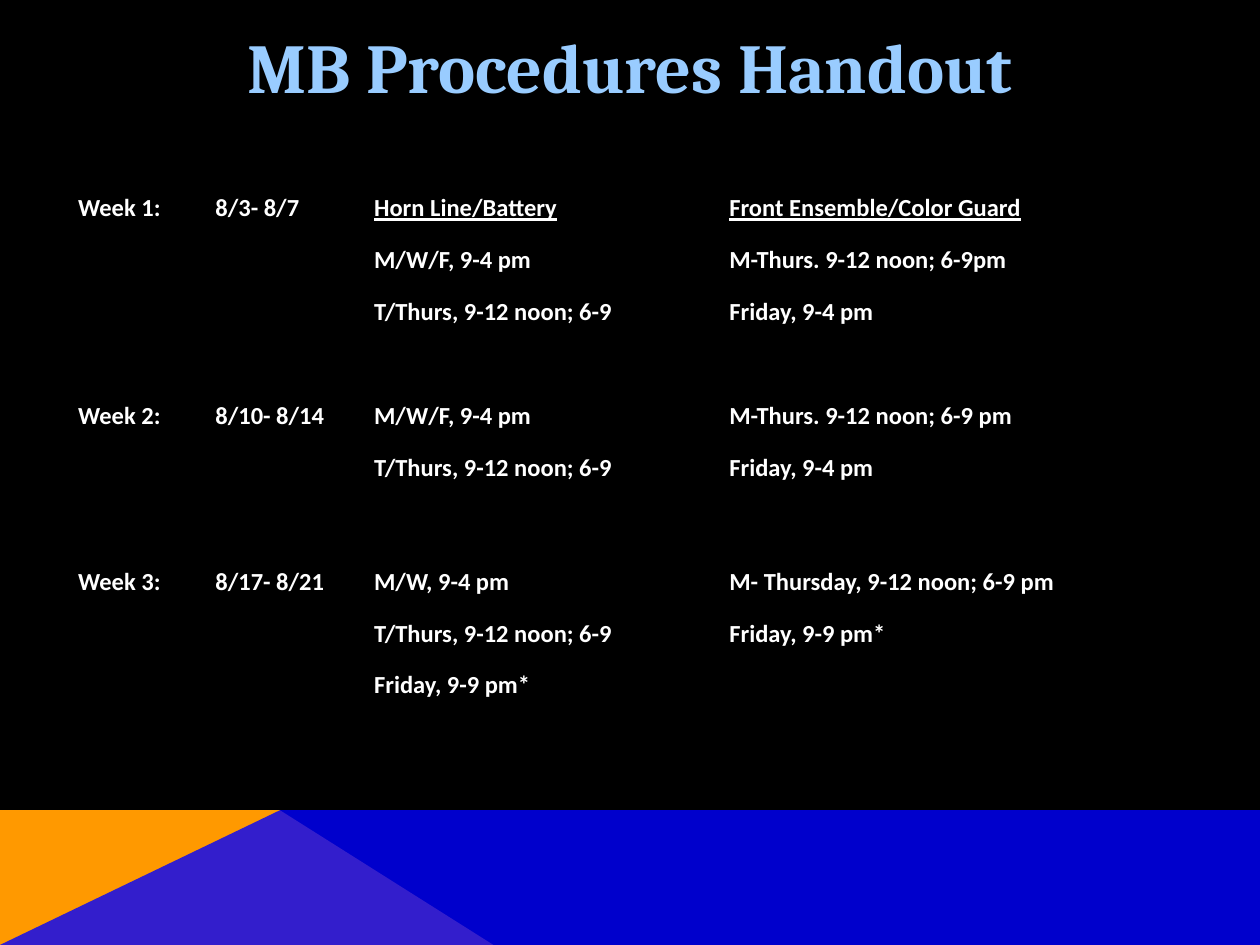
from lxml.etree import SubElement
from pptx import Presentation
from pptx.dml.color import RGBColor
from pptx.enum.text import MSO_ANCHOR, PP_ALIGN
from pptx.oxml.ns import qn
from pptx.util import Pt

TITLE = "MB Procedures Handout"
WEEKS = [
    (["Week 1:"], ["8/3- 8/7"],
     ["Horn Line/Battery", "M/W/F, 9-4 pm", "T/Thurs, 9-12 noon; 6-9"],
     ["Front Ensemble/Color Guard", "M-Thurs. 9-12 noon; 6-9pm", "Friday, 9-4 pm"], []),
    (["Week 2:"], ["8/10- 8/14"],
     ["M/W/F, 9-4 pm", "T/Thurs, 9-12 noon; 6-9"],
     ["M-Thurs. 9-12 noon; 6-9 pm", "Friday, 9-4 pm"], []),
    (["Week 3:"], ["8/17- 8/21"],
     ["M/W, 9-4 pm", "T/Thurs, 9-12 noon; 6-9", "Friday, 9-9 pm*"],
     ["M- Thursday, 9-12 noon; 6-9 pm", "Friday, 9-9 pm*"], []),
]
HEADS = ("Horn Line/Battery", "Front Ensemble/Color Guard")
WIDTHS = (78.5, 90.7, 203, 200.2, 45.4)
HEIGHTS = (118.8, 67.7, 109.4)
TOPS = (0, 0, 27)
RULES = (3, 1, 1)
WIDE, HIGH, EDGE, PEAK = 720, 540, 463, 160.5
BANDS = [
    ("FF9900", 100, [(0, HIGH), (0, EDGE), (PEAK, EDGE), (281.5, HIGH)]),
    ("0000FF", 80, [(0, HIGH), (PEAK, EDGE), (WIDE, EDGE), (WIDE, HIGH)]),
]
HEAD_FONT = {"name": "Cambria", "size": Pt(40), "bold": True}
BODY_FONT = {"name": "Calibri", "size": Pt(14), "bold": True}
PARA = {"line_spacing": 1.15, "space_after": Pt(10)}


def apply(obj, vals):
    """Set each named attribute on an object."""
    for key, val in vals.items():
        setattr(obj, key, val)


def paint(fill, tone):
    """Give a fill one solid colour."""
    fill.solid()
    fill.fore_color.rgb = RGBColor.from_string(tone)


def write(para, text, font, tone):
    """Add one formatted run to a paragraph."""
    run = para.add_run()
    run.text = text
    apply(run.font, font)
    run.font.color.rgb = RGBColor.from_string(tone)
    return run


def add_band(slide, tone, alpha, points):
    """Draw one filled outline at the foot of the slide."""
    pen = slide.shapes.build_freeform(*points[0], scale=12700)
    pen.add_line_segments(points[1:], close=True)
    shape = pen.convert_to_shape()
    shape.shadow.inherit = False
    shape.line.fill.background()
    paint(shape.fill, tone)
    if alpha < 100:
        clr = shape.fill._xPr.find(".//" + qn("a:srgbClr"))
        SubElement(clr, qn("a:alpha"), val=str(alpha * 1000))


def add_edges(cell, low):
    """Outline a cell in black, with its own lower width."""
    props = cell._tc.get_or_add_tcPr()
    for side, width in zip("LRTB", (1, 1, 1, low)):
        line = SubElement(props, qn("a:ln" + side), w=str(Pt(width)))
        SubElement(SubElement(line, qn("a:solidFill")), qn("a:srgbClr"), val="000000")


def fill_cell(cell, lines, top, low):
    """Format one cell and write its lines."""
    add_edges(cell, low)
    paint(cell.fill, "000000")
    apply(cell, {"margin_left": Pt(5), "margin_right": Pt(5),
                 "margin_top": Pt(top), "margin_bottom": 0})
    frame = cell.text_frame
    for num, text in enumerate(lines):
        para = frame.add_paragraph() if num else frame.paragraphs[0]
        apply(para, PARA)
        run = write(para, text, BODY_FONT, "FFFFFF")
        if text in HEADS:
            run.font.underline = True


def add_plan(slide):
    """Build the table of weekly times."""
    grid = slide.shapes.add_table(
        len(WEEKS), len(WIDTHS), Pt(39.6), Pt(108), Pt(sum(WIDTHS)), Pt(sum(HEIGHTS))).table
    apply(grid, {"first_row": False, "horz_banding": False})
    for col, width in zip(grid.columns, WIDTHS):
        col.width = Pt(width)
    for row, high, week, top, low in zip(grid.rows, HEIGHTS, WEEKS, TOPS, RULES):
        row.height = Pt(high)
        for cell, lines in zip(row.cells, week):
            fill_cell(cell, lines, top, low)


def main():
    """Build and save the slide."""
    deck = Presentation()
    apply(deck, {"slide_width": Pt(WIDE), "slide_height": Pt(HIGH)})
    slide = deck.slides.add_slide(deck.slide_layouts[5])
    paint(slide.background.fill, "000000")
    for band in BANDS:
        add_band(slide, *band)
    title = slide.shapes.title
    apply(title, {"left": Pt(36), "top": Pt(5), "width": Pt(648), "height": Pt(65)})
    title.text_frame.vertical_anchor = MSO_ANCHOR.MIDDLE
    para = title.text_frame.paragraphs[0]
    para.alignment = PP_ALIGN.CENTER
    write(para, TITLE, HEAD_FONT, "99CCFF")
    add_plan(slide)
    deck.save("out.pptx")


if __name__ == "__main__":
    main()
